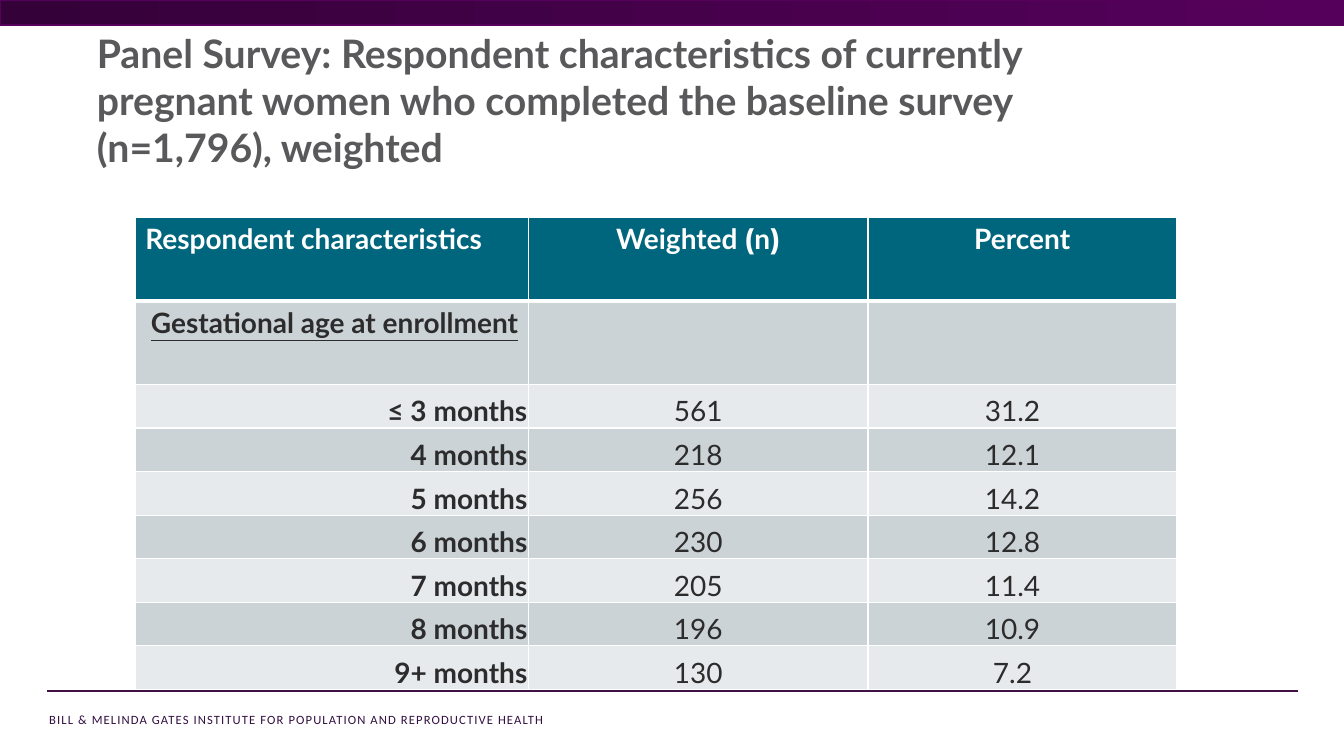
from pptx import Presentation
from pptx.dml.color import RGBColor
from pptx.enum.shapes import MSO_CONNECTOR, MSO_SHAPE
from pptx.enum.text import MSO_ANCHOR as Anchor, MSO_AUTO_SIZE as AutoSize, PP_ALIGN as Align
from pptx.oxml.ns import qn
from pptx.util import Pt
from lxml.etree import SubElement

WHITE = RGBColor(0xFF, 0xFF, 0xFF)
TITLE_GREY = RGBColor(0x59, 0x59, 0x5B)
INK = RGBColor(0x2C, 0x2C, 0x2D)
TEAL = RGBColor(0x00, 0x66, 0x7D)
DARK_BAND = RGBColor(0xCC, 0xD3, 0xD7)
LIGHT_BAND = RGBColor(0xE7, 0xEA, 0xEC)
FOOTER_PURPLE = RGBColor(0x33, 0x0F, 0x42)
RULE_PURPLE = RGBColor(0x41, 0x10, 0x44)
BAR_START = RGBColor(0x35, 0x01, 0x39)
BAR_END = RGBColor(0x55, 0x01, 0x5B)

TITLE = ("Panel Survey: Respondent characteristics of currently pregnant women "
         "who completed the baseline survey (n=1,796), weighted")
FOOTER = "BILL & MELINDA GATES INSTITUTE FOR POPULATION AND REPRODUCTIVE HEALTH"
COLUMN_WIDTHS = (280.8, 242.6, 220.3)
TALL_ROW, MONTH_ROW = 59.8, 31.15
MONTHS = (
    ("≤ 3 months", "561", "31.2"),
    ("4 months", "218", "12.1"),
    ("5 months", "256", "14.2"),
    ("6 months", "230", "12.8"),
    ("7 months", "205", "11.4"),
    ("8 months", "196", "10.9"),
    ("9+ months", "130", "7.2"),
)


def write(para, text, size=20, font="Lato", color=INK, bold=False,
          underline=None, spacing=None, align=Align.LEFT):
    """Add a formatted span of text to a paragraph."""
    para.alignment = align
    span = para.add_run()
    span.text = text
    span.font.size = Pt(size)
    span.font.name = font
    span.font.color.rgb = color
    span.font.bold = bold
    span.font.underline = underline
    if spacing is not None:
        span.font._element.set("spc", str(round(spacing * 100)))


def add_title(page):
    """Place and write the slide title."""
    title = page.shapes.title
    title.left, title.top, title.width, title.height = Pt(62), Pt(17.3), Pt(778.3), Pt(131)
    frame = title.text_frame
    frame.word_wrap = True
    frame.auto_size = AutoSize.NONE
    frame.vertical_anchor = Anchor.TOP
    write(frame.paragraphs[0], TITLE, size=28, color=TITLE_GREY, bold=True)


def add_top_bar(page):
    """Draw the gradient bar along the top edge."""
    bar = page.shapes.add_shape(MSO_SHAPE.RECTANGLE, 0, 0, Pt(960), Pt(18))
    bar.shadow.inherit = False
    bar.fill.gradient()
    bar.fill.gradient_angle = 0
    for stop, color, position in zip(bar.fill.gradient_stops, (BAR_START, BAR_END), (0, 1)):
        stop.color.rgb = color
        stop.position = position
    bar.line.color.rgb = BAR_END
    bar.line.width = Pt(1)


def add_footer(page):
    """Draw the footer rule and the institute name."""
    rule = page.shapes.add_connector(
        MSO_CONNECTOR.STRAIGHT, Pt(927.4), Pt(493.7), Pt(33.4), Pt(493.7))
    rule.line.color.rgb = RULE_PURPLE
    rule.line.width = Pt(1.25)
    SubElement(rule._element.spPr, qn("a:effectLst"))
    box = page.shapes.add_textbox(Pt(28), Pt(504.9), Pt(531.4), Pt(18.2))
    box.text_frame.word_wrap = True
    write(box.text_frame.paragraphs[0], FOOTER, size=9, font="Calibri",
          color=FOOTER_PURPLE, spacing=0.8)


def style_cell(cell, color, top=1, bottom=1):
    """Give a cell white borders and a solid fill."""
    properties = cell._tc.get_or_add_tcPr()
    for side, width in (("L", 1), ("R", 1), ("T", top), ("B", bottom)):
        line = SubElement(properties, qn(f"a:ln{side}"), w=str(Pt(width)))
        SubElement(SubElement(line, qn("a:solidFill")), qn("a:srgbClr"), val=str(WHITE))
    cell.fill.solid()
    cell.fill.fore_color.rgb = color


def fill_header(table):
    """Write the column headings and the group heading."""
    headings = (
        (Align.LEFT, (("Respondent characteristics", "Lato"),)),
        (Align.CENTER, (("Weighted ", "Lato"), ("(", "Montserrat"),
                        ("n", "Lato"), (")", "Montserrat"))),
        (Align.CENTER, (("Percent", "Lato"),)),
    )
    for column, (align, spans) in enumerate(headings):
        cell = table.cell(0, column)
        style_cell(cell, TEAL, bottom=3)
        style_cell(table.cell(1, column), DARK_BAND, top=3)
        for text, font in spans:
            write(cell.text_frame.paragraphs[0], text, font=font,
                  color=WHITE, bold=True, align=align)
    write(table.cell(1, 0).text_frame.paragraphs[0], "Gestational age at enrollment",
          bold=True, underline=True, align=Align.RIGHT)


def fill_months(table):
    """Write one banded row for each gestational age."""
    for row, values in enumerate(MONTHS, start=2):
        for column, text in enumerate(values):
            cell = table.cell(row, column)
            style_cell(cell, DARK_BAND if row % 2 else LIGHT_BAND)
            cell.vertical_anchor = Anchor.BOTTOM
            cell.margin_left = cell.margin_top = Pt(0.7)
            cell.margin_right = Pt(14.4 if column == 2 else 0.7)
            cell.margin_bottom = 0
            write(cell.text_frame.paragraphs[0], text, bold=column == 0,
                  align=Align.CENTER if column else Align.RIGHT)


def add_survey_table(page):
    """Build the table of respondent characteristics."""
    heights = [TALL_ROW] * 2 + [MONTH_ROW] * len(MONTHS)
    table = page.shapes.add_table(
        len(heights), len(COLUMN_WIDTHS), Pt(96.6), Pt(155),
        Pt(sum(COLUMN_WIDTHS)), Pt(sum(heights))).table
    for column, width in zip(table.columns, COLUMN_WIDTHS):
        column.width = Pt(width)
    for row, height in zip(table.rows, heights):
        row.height = Pt(height)
    fill_header(table)
    fill_months(table)


def main():
    """Build and save the slide."""
    deck = Presentation()
    deck.slide_width, deck.slide_height = Pt(960), Pt(540)
    page = deck.slides.add_slide(deck.slide_layouts[5])
    add_footer(page)
    add_top_bar(page)
    add_survey_table(page)
    add_title(page)
    deck.save("out.pptx")


if __name__ == "__main__":
    main()
